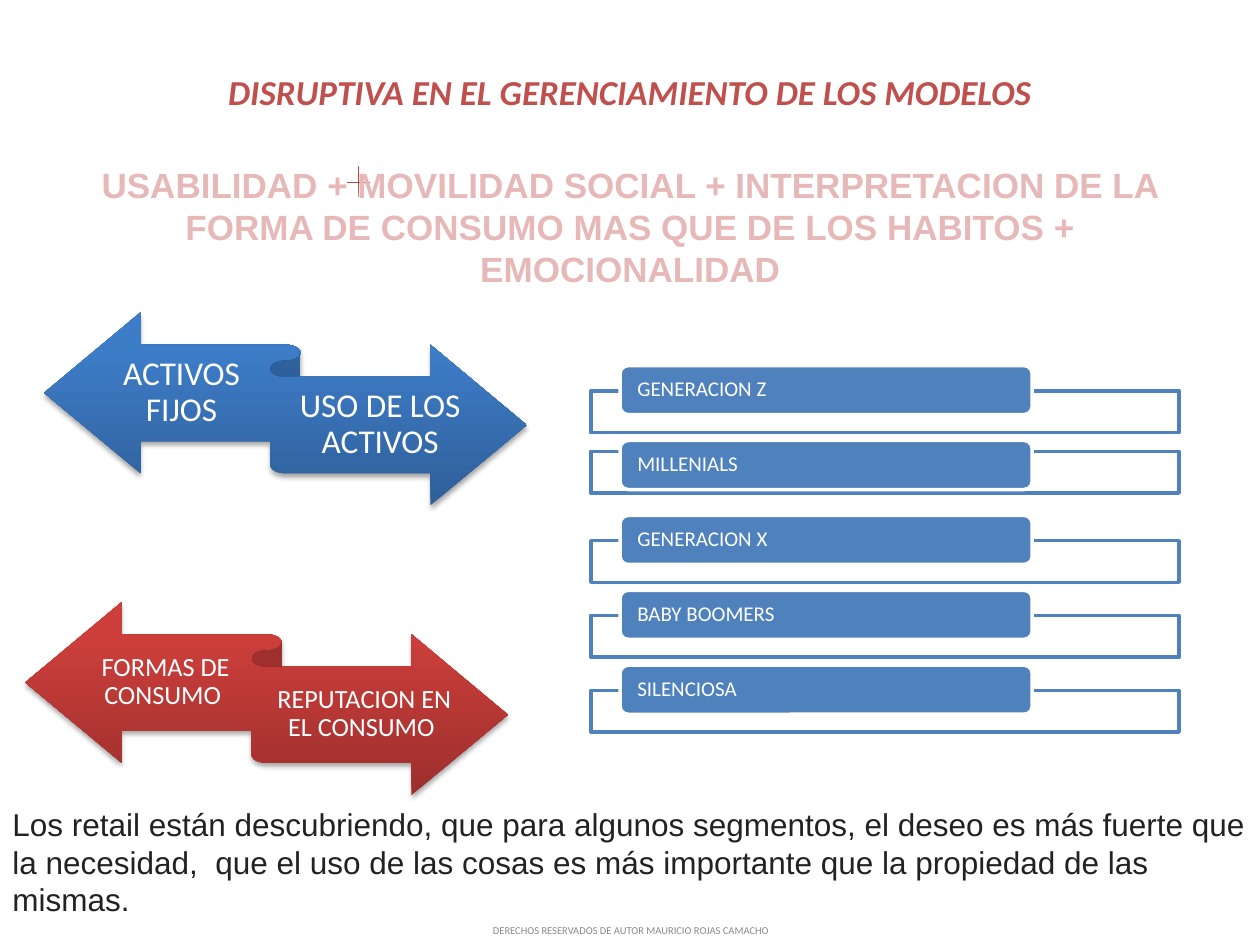
from lxml.etree import SubElement
from pptx import Presentation
from pptx.dml.color import RGBColor
from pptx.enum.shapes import MSO_SHAPE
from pptx.enum.text import MSO_ANCHOR, PP_ALIGN
from pptx.oxml import parse_xml
from pptx.oxml.ns import nsdecls, qn
from pptx.util import Cm, Pt

BLUE, RED, WHITE = "4F81BD", "C0504D", "FFFFFF"
BLUE_GRADIENT = ("2F5F99", "3D7CC7")
RED_GRADIENT = ("9C2F2D", "CB3E3A")
rgb = RGBColor.from_string


def write(shape, text, color, font, frame=None, paragraph_format=None):
    """Put one formatted paragraph into the shape and return its run."""
    text_frame = shape.text_frame
    paragraph = text_frame.paragraphs[0]
    run = paragraph.add_run()
    run.text = text
    run.font.color.rgb = rgb(color)
    frame_values = {"word_wrap": True, "vertical_anchor": MSO_ANCHOR.TOP} | (frame or {})
    paragraph_values = {"alignment": PP_ALIGN.CENTER} | (paragraph_format or {})
    for target, values in ((text_frame, frame_values), (paragraph, paragraph_values),
                           (run.font, {"name": "Calibri"} | font)):
        for name, value in values.items():
            setattr(target, name, value)
    return run


def add_glossy_shape(kind, left, top, width, height, gradient):
    """Add a shape with a vertical gradient and a soft shadow below it."""
    shape = slide.shapes.add_shape(kind, Cm(left), Cm(top), Cm(width), Cm(height))
    shape.line.fill.background()
    shape.fill.gradient()
    shape.fill.gradient_angle = 90
    for stop, color, position in zip(shape.fill.gradient_stops, gradient, (0, 0.8)):
        stop.color.rgb = rgb(color)
        stop.position = position
    shape.shadow.inherit = False
    effects = shape._element.spPr.find(qn("a:effectLst"))
    effects.append(parse_xml(
        f'<a:outerShdw {nsdecls("a")} blurRad="40000" dist="23000" dir="5400000" rotWithShape="0">'
        '<a:srgbClr val="000000"><a:alpha val="35000"/></a:srgbClr></a:outerShdw>'))
    return shape


presentation = Presentation()
presentation.slide_width, presentation.slide_height = Cm(25.4), Cm(19.05)
slide = presentation.slides.add_slide(presentation.slide_layouts[5])

# Title
title = slide.shapes.title
title.left, title.top, title.width, title.height = Cm(3.6), Cm(1.3), Cm(18.2), Cm(1.12)
write(title, "DISRUPTIVA EN EL GERENCIAMIENTO DE LOS MODELOS", RED,
      {"size": Pt(20), "bold": True, "italic": True})

plus = add_glossy_shape(MSO_SHAPE.MATH_PLUS, 6.91, 3.25, 0.64, 0.84, RED_GRADIENT)
plus.adjustments[0] = 0

# Double arrows with a label on each side
label_frame = {"margin_left": 0, "margin_right": 0, "margin_top": Cm(0.17),
               "margin_bottom": Cm(0.19), "vertical_anchor": MSO_ANCHOR.MIDDLE}
ribbons = [
    (0.89, 6.3, BLUE_GRADIENT, 19, "ACTIVOS FIJOS", "USO DE LOS ACTIVOS"),
    (0.51, 12.14, RED_GRADIENT, 15, " FORMAS DE CONSUMO", " REPUTACION EN EL CONSUMO"),
]
for left, top, gradient, size, left_text, right_text in ribbons:
    add_glossy_shape(MSO_SHAPE.LEFT_RIGHT_RIBBON, left, top, 9.73, 3.89, gradient)
    for text, dx, dy, width in ((left_text, 1.17, 0.67, 3.2), (right_text, 4.87, 1.31, 3.81)):
        label = slide.shapes.add_textbox(Cm(left + dx), Cm(top + dy), Cm(width), Cm(1.91))
        write(label, text, WHITE, {"size": Pt(size)}, label_frame, {"line_spacing": 0.9})

# Subtitle with outlined letters
subtitle = slide.shapes.add_textbox(Cm(0.64), Cm(3.18), Cm(24.13), Cm(2.84))
subtitle_run = write(
    subtitle,
    "USABILIDAD + MOVILIDAD SOCIAL + INTERPRETACION DE LA FORMA DE CONSUMO "
    "MAS QUE DE LOS HABITOS + EMOCIONALIDAD",
    "E6B9B8", {"name": "Arial", "size": Pt(20), "bold": True})
subtitle_run.font._element.insert(0, parse_xml(
    f'<a:ln {nsdecls("a")} w="22225"><a:solidFill><a:srgbClr val="{RED}"/></a:solidFill></a:ln>'))

footer = slide.shapes.add_textbox(Cm(8.69), Cm(18.24), Cm(8.05), Cm(1.02))
write(footer, "DERECHOS RESERVADOS DE AUTOR MAURICIO ROJAS CAMACHO", "898989",
      {"size": Pt(6)}, {"vertical_anchor": MSO_ANCHOR.MIDDLE})

# Generations: a frame behind each bar
bar_frame = {"margin_left": Cm(0.3), "margin_right": Cm(0.3), "margin_top": 0,
             "margin_bottom": 0, "vertical_anchor": MSO_ANCHOR.MIDDLE}
generations = [("GENERACION Z", 0.51), ("MILLENIALS", 0.22), ("GENERACION X", 0.51),
               ("BABY BOOMERS", 0.51), ("SILENCIOSA", 0.51)]
for index, (name, frame_drop) in enumerate(generations):
    top = 7.37 + 1.51 * index
    box = slide.shapes.add_shape(
        MSO_SHAPE.RECTANGLE, Cm(11.91), Cm(top + frame_drop), Cm(11.86), Cm(0.84))
    bar = slide.shapes.add_shape(
        MSO_SHAPE.ROUNDED_RECTANGLE, Cm(12.5), Cm(top), Cm(8.31), Cm(0.99))
    for shape, fill, line in ((box, WHITE, BLUE), (bar, BLUE, WHITE)):
        shape.shadow.inherit = False
        shape.fill.solid()
        shape.fill.fore_color.rgb = rgb(fill)
        shape.line.color.rgb = rgb(line)
        shape.line.width = Pt(2)
    box_color = box._element.spPr.find(qn("a:solidFill")).find(qn("a:srgbClr"))
    SubElement(box_color, qn("a:alpha"), val="90000")
    write(bar, name, WHITE, {"size": Pt(12)}, bar_frame,
          {"alignment": PP_ALIGN.LEFT, "line_spacing": 0.9})

conclusion = slide.shapes.add_textbox(Cm(0), Cm(16.1), Cm(25.7), Cm(2.57))
write(conclusion,
      "Los retail están descubriendo, que para algunos segmentos, el deseo es más fuerte "
      "que la necesidad,  que el uso de las cosas es más importante que la propiedad de "
      "las mismas.",
      "222222", {"name": "Arial", "size": Pt(18)}, None, {"alignment": PP_ALIGN.LEFT})

presentation.save("out.pptx")
